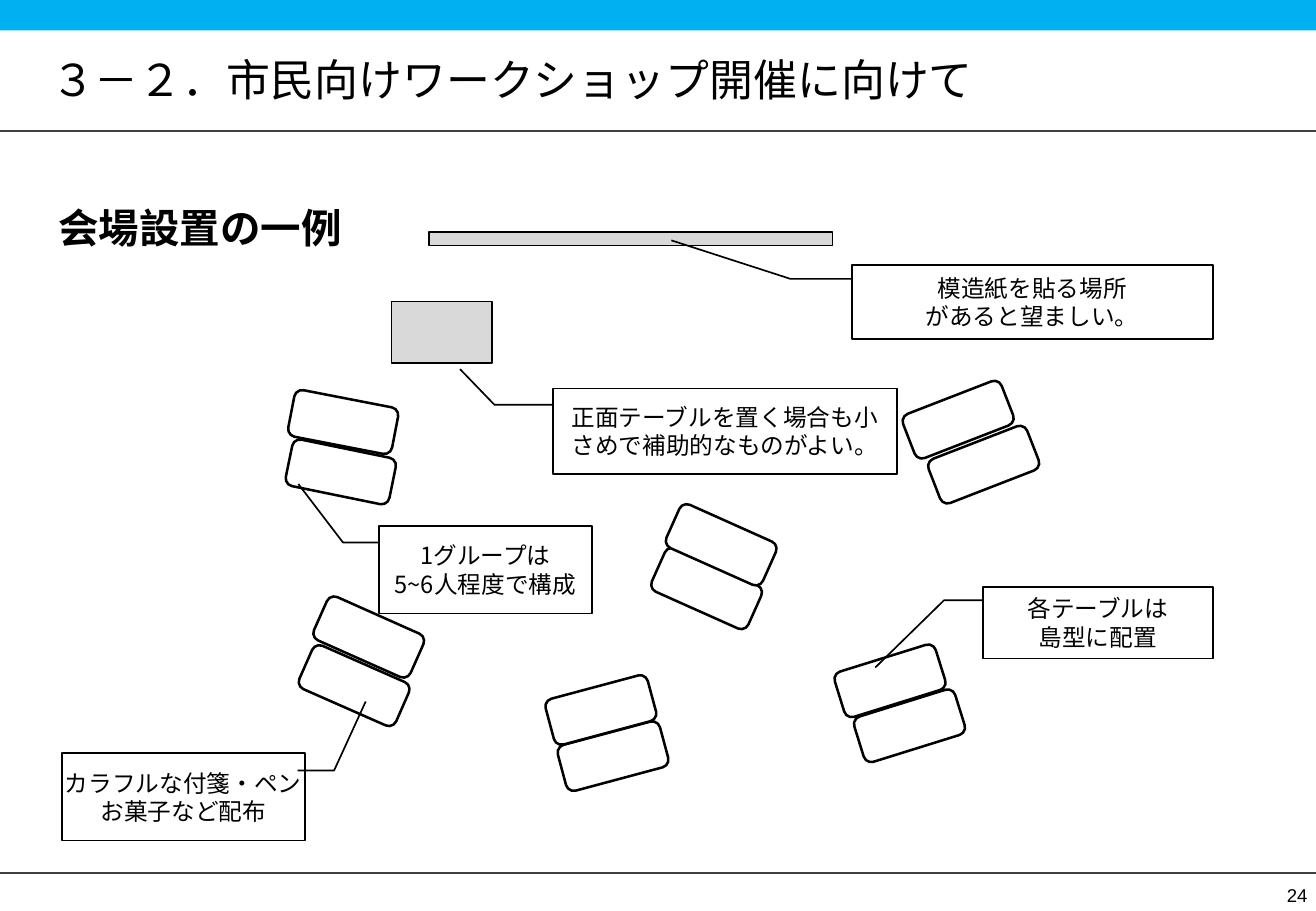
import pptx
import pptx.util
from lxml import etree
from pptx.dml.color import RGBColor
from pptx.enum.shapes import MSO_CONNECTOR, MSO_SHAPE
from pptx.enum.text import MSO_ANCHOR, PP_ALIGN
from pptx.oxml.ns import qn
from pptx.util import Inches

BLACK = RGBColor(0x00, 0x00, 0x00)
WHITE = RGBColor(0xFF, 0xFF, 0xFF)
SKY = RGBColor(0x00, 0xB0, 0xF0)
RULE_GRAY = RGBColor(0x40, 0x40, 0x40)
FIXTURE_GRAY = RGBColor(0xD9, 0xD9, 0xD9)
JAPANESE = "Noto Sans CJK JP"
SLIDE_WIDTH, SLIDE_HEIGHT = 10.83, 7.5
TABLE_SIZE = (0.87, 0.39)

TITLE = "３－２．市民向けワークショップ開催に向けて"
HEADING = "会場設置の一例"
PAGE_NUMBER = "24"
RULE_TOPS = [7.19, 1.08]
FIXTURES = [(3.22, 2.48, 0.83, 0.51), (3.53, 1.91, 3.32, 0.11)]

# Each island: (left, top, rotation) of its two tables.
ISLANDS = [
    [(7.66, 3.63, -21.2), (7.45, 3.26, -21.2)],
    [(5.38, 4.65, 24.1), (5.5, 4.29, 24.1)],
    [(7.05, 5.78, -17.3), (6.89, 5.41, -17.3)],
    [(4.61, 6.03, -15), (4.51, 5.65, -15)],
    [(2.37, 3.69, 11.6), (2.39, 3.28, 11)],
    [(2.48, 5.45, 23.8), (2.6, 5.05, 24)],
]

LEFT_ELBOW = (0.19, 0, 0.19, -0.17)
RIGHT_ELBOW = (0.2, 0.97, 0.2, 1.12)
CALLOUTS = [
    ((8.09, 4.83, 1.89, 0.59), LEFT_ELBOW, (1.13, -0.47), ["各テーブルは", "島型に配置"]),
    ((4.55, 3.2, 2.83, 0.7), LEFT_ELBOW, (-0.23, -0.27),
     ["正面テーブルを置く場合も小さめで補助的なものがよい。"]),
    ((7.01, 2.18, 2.97, 0.61), LEFT_ELBOW, (-0.33, -0.5), ["模造紙を貼る場所", "があると望ましい。"]),
    ((3.12, 4.33, 1.75, 0.72), LEFT_ELBOW, (-0.48, -0.38), ["1グループは", "5~6人程度で構成"]),
    ((0.51, 6.2, 2, 0.72), RIGHT_ELBOW, (-0.59, 1.25), ["カラフルな付箋・ペン", "お菓子など配布"]),
]


def write(frame, lines, size, align, font=JAPANESE, bold=False, anchor=MSO_ANCHOR.MIDDLE):
    """Fill a text frame with one paragraph per line."""
    frame.vertical_anchor = anchor
    for index, line in enumerate(lines):
        paragraph = frame.add_paragraph() if index else frame.paragraphs[0]
        paragraph.text = line
        paragraph.alignment = align
        paragraph.font.size = pptx.util.Pt(size)
        paragraph.font.bold = bold
        paragraph.font.color.rgb = BLACK
        paragraph.font.name = font
        properties = paragraph._p.pPr.find(qn("a:defRPr"))
        etree.SubElement(properties, qn("a:ea")).set("typeface", font)


def add_box(slide, kind, box, fill, line_width=None):
    """Add a filled shape, outlined in black when a line width is given."""
    shape = slide.shapes.add_shape(kind, *map(Inches, box))
    shape.shadow.inherit = False
    shape.fill.solid()
    shape.fill.fore_color.rgb = fill
    if line_width:
        shape.line.color.rgb = BLACK
        shape.line.width = pptx.util.Pt(line_width)
    else:
        shape.line.fill.background()
    return shape


def add_rule(slide, top):
    """Add a full-width horizontal rule."""
    rule = slide.shapes.add_connector(
        MSO_CONNECTOR.STRAIGHT, 0, Inches(top), Inches(SLIDE_WIDTH), Inches(top))
    rule.line.color.rgb = RULE_GRAY
    rule.line.width = pptx.util.Pt(1)
    etree.SubElement(rule._element.spPr, qn("a:effectLst"))


def add_text(slide, box, margins):
    """Add a wrapping text box and return its frame."""
    frame = slide.shapes.add_textbox(*map(Inches, box)).text_frame
    frame.word_wrap = True
    set_margins(frame, *margins)
    return frame


def set_margins(frame, side, end):
    """Set the side and top/bottom margins of a text frame."""
    frame.margin_left = frame.margin_right = Inches(side)
    frame.margin_top = frame.margin_bottom = Inches(end)


def main():
    """Build the workshop venue slide."""
    presentation = pptx.Presentation()
    presentation.slide_width = Inches(SLIDE_WIDTH)
    presentation.slide_height = Inches(SLIDE_HEIGHT)
    slide = presentation.slides.add_slide(presentation.slide_layouts[5])

    title = slide.shapes.title
    title.left, title.top, title.width, title.height = map(Inches, (0.42, 0.33, 9.99, 0.64))
    set_margins(title.text_frame, 0, 0)
    write(title.text_frame, [TITLE], 26, PP_ALIGN.LEFT)

    add_box(slide, MSO_SHAPE.RECTANGLE, (0, 0, SLIDE_WIDTH, 0.25), SKY)
    for top in RULE_TOPS:
        add_rule(slide, top)
    number = add_text(slide, (10.39, 7.22, 0.44, 0.28), (0.07, 0.04))
    write(number, [PAGE_NUMBER], 11, PP_ALIGN.RIGHT, font="Arial", anchor=MSO_ANCHOR.BOTTOM)
    heading = add_text(slide, (0.38, 1.62, 3.06, 0.55), (0.1, 0.05))
    write(heading, [HEADING], 24, PP_ALIGN.LEFT, bold=True, anchor=MSO_ANCHOR.TOP)

    for island in ISLANDS:
        for left, top, rotation in island:
            table = add_box(slide, MSO_SHAPE.ROUNDED_RECTANGLE, (left, top, *TABLE_SIZE), WHITE, 1.5)
            table.rotation = rotation
    for fixture in FIXTURES:
        add_box(slide, MSO_SHAPE.RECTANGLE, fixture, FIXTURE_GRAY, 0.75)

    for box, elbow, target, lines in CALLOUTS:
        callout = add_box(slide, MSO_SHAPE.LINE_CALLOUT_2, box, WHITE, 1)
        for index, value in enumerate(elbow + target):
            callout.adjustments[index] = value
        callout.text_frame.word_wrap = len(lines) == 1
        write(callout.text_frame, lines, 14, PP_ALIGN.CENTER)

    presentation.save("out.pptx")


if __name__ == "__main__":
    main()
